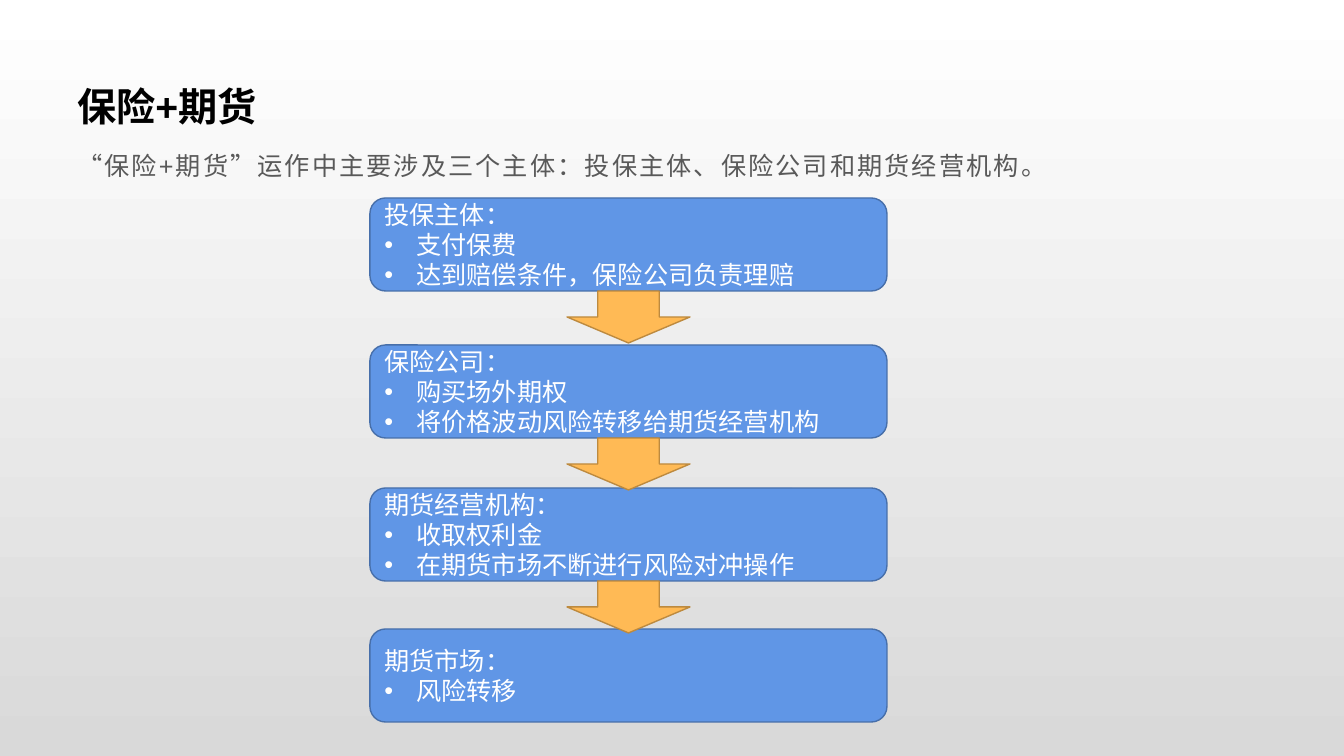
from dataclasses import dataclass

from lxml import etree
from pptx import Presentation
from pptx.dml.color import RGBColor
from pptx.enum.shapes import MSO_SHAPE
from pptx.enum.text import MSO_ANCHOR, MSO_AUTO_SIZE, PP_ALIGN
from pptx.oxml.ns import qn
from pptx.util import Emu, Pt

ROUND_BOX = MSO_SHAPE.ROUNDED_RECTANGLE
DOWN_ARROW = MSO_SHAPE.DOWN_ARROW
TOP, MIDDLE = MSO_ANCHOR.TOP, MSO_ANCHOR.MIDDLE
LEFT = PP_ALIGN.LEFT
NO_FIT = MSO_AUTO_SIZE.NONE

EMU_PER_PX = 914400 / 100.8
PAGE_WIDTH, PAGE_HEIGHT = 1344, 756
BOX_LEFT, BOX_WIDTH, BOX_HEIGHT = 370, 517, 93
ARROW_WIDTH, ARROW_HEIGHT = 123, 52
BULLET_INDENT = 32


@dataclass(frozen=True)
class Theme:
    font: str = "Arial"
    title_size: int = 28
    text_size: int = 18
    title: str = "000000"
    body: str = "595959"
    box_text: str = "FFFFFF"
    box_fill: str = "6096E6"
    box_line: str = "476FAA"
    arrow_fill: str = "FFBA55"
    arrow_line: str = "BD8A3F"
    page_top: str = "FFFFFF"
    page_bottom: str = "D9D9D9"


THEME = Theme()

STAGES = [
    (198, "投保主体：", ["支付保费", "达到赔偿条件，保险公司负责理赔"]),
    (345, "保险公司：", ["购买场外期权", "将价格波动风险转移给期货经营机构"]),
    (488, "期货经营机构：", ["收取权利金", "在期货市场不断进行风险对冲操作"]),
    (629, "期货市场：", ["风险转移"]),
]


def px(length):
    return Emu(round(length * EMU_PER_PX))


def rgb(code):
    return RGBColor.from_string(code)


def apply(target, values):
    for name, value in values.items():
        setattr(target, name, value)


def place(shape, left, top, width, height):
    apply(shape, {"left": px(left), "top": px(top),
                  "width": px(width), "height": px(height)})


def write_span(para, text, size, color, bold=False):
    span = para.add_run()
    span.text = text
    apply(span.font, {"name": THEME.font, "size": Pt(size), "bold": bold})
    span.font.color.rgb = rgb(color)
    return span


def set_bullet(para, character=None, indent=0):
    """Give the paragraph a hanging bullet, or none without a character."""
    properties = para._p.get_or_add_pPr()
    properties.set("marL", str(px(indent)))
    properties.set("indent", str(-px(indent)))
    if character:
        font = etree.SubElement(properties, qn("a:buFont"))
        font.set("typeface", THEME.font)
        etree.SubElement(properties, qn("a:buChar")).set("char", character)
    else:
        etree.SubElement(properties, qn("a:buNone"))


def paint_background(page):
    fill = page.background.fill
    fill.gradient()
    fill.gradient_angle = 270
    for stop, color in zip(fill.gradient_stops, (THEME.page_top, THEME.page_bottom)):
        stop.color.rgb = rgb(color)


def fill_title(shape, text):
    place(shape, 67, 67, 1210, 78)
    frame = shape.text_frame
    apply(frame, {"vertical_anchor": MIDDLE, "auto_size": NO_FIT, "word_wrap": True})
    para = frame.paragraphs[0]
    para.alignment = LEFT
    write_span(para, text, THEME.title_size, THEME.title, bold=True)


def fill_body(shape, text):
    place(shape, 67, 136, 1210, 67)
    frame = shape.text_frame
    apply(frame, {"vertical_anchor": TOP, "auto_size": NO_FIT, "word_wrap": True})
    para = frame.paragraphs[0]
    apply(para, {"alignment": LEFT, "line_spacing": 1.3,
                 "space_before": Pt(0), "space_after": Pt(10)})
    set_bullet(para)
    span = write_span(para, text, THEME.text_size, THEME.body)
    span.font._element.set("spc", "150")


def add_figure(page, kind, bounds, fill, line):
    shape = page.shapes.add_shape(kind, *map(px, bounds))
    shape.shadow.inherit = False
    shape.fill.solid()
    shape.fill.fore_color.rgb = rgb(fill)
    shape.line.color.rgb = rgb(line)
    shape.line.width = Pt(1)
    return shape


def add_stage(page, top, heading, duties):
    box = add_figure(page, ROUND_BOX, (BOX_LEFT, top, BOX_WIDTH, BOX_HEIGHT),
                     THEME.box_fill, THEME.box_line)
    frame = box.text_frame
    apply(frame, {"vertical_anchor": MIDDLE, "word_wrap": True})
    para = frame.paragraphs[0]
    para.alignment = LEFT
    write_span(para, heading, THEME.text_size, THEME.box_text)
    for duty in duties:
        para = frame.add_paragraph()
        para.alignment = LEFT
        set_bullet(para, "•", BULLET_INDENT)
        write_span(para, duty, THEME.text_size, THEME.box_text)


def add_arrow_below(page, box_top):
    left = BOX_LEFT + (BOX_WIDTH - ARROW_WIDTH) / 2
    add_figure(page, DOWN_ARROW,
               (left, box_top + BOX_HEIGHT, ARROW_WIDTH, ARROW_HEIGHT),
               THEME.arrow_fill, THEME.arrow_line)


def main():
    deck = Presentation()
    apply(deck, {"slide_width": px(PAGE_WIDTH), "slide_height": px(PAGE_HEIGHT)})
    page = deck.slides.add_slide(deck.slide_layouts[1])
    paint_background(page)
    fill_title(page.shapes.title, "保险+期货")
    fill_body(page.placeholders[1],
              "“保险+期货”运作中主要涉及三个主体：投保主体、保险公司和期货经营机构。")
    for stage in STAGES:
        add_stage(page, *stage)
    for top, *_ in STAGES[:-1]:
        add_arrow_below(page, top)
    deck.save("out.pptx")


if __name__ == "__main__":
    main()
